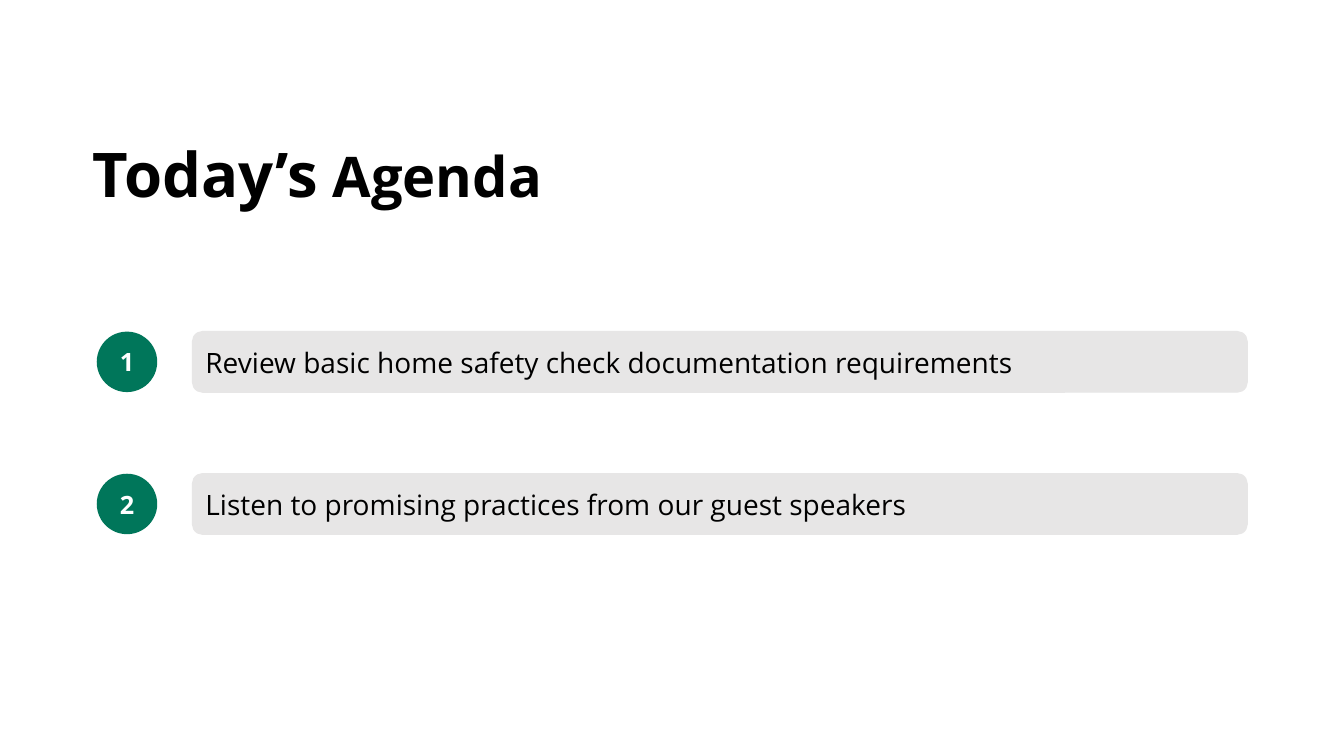
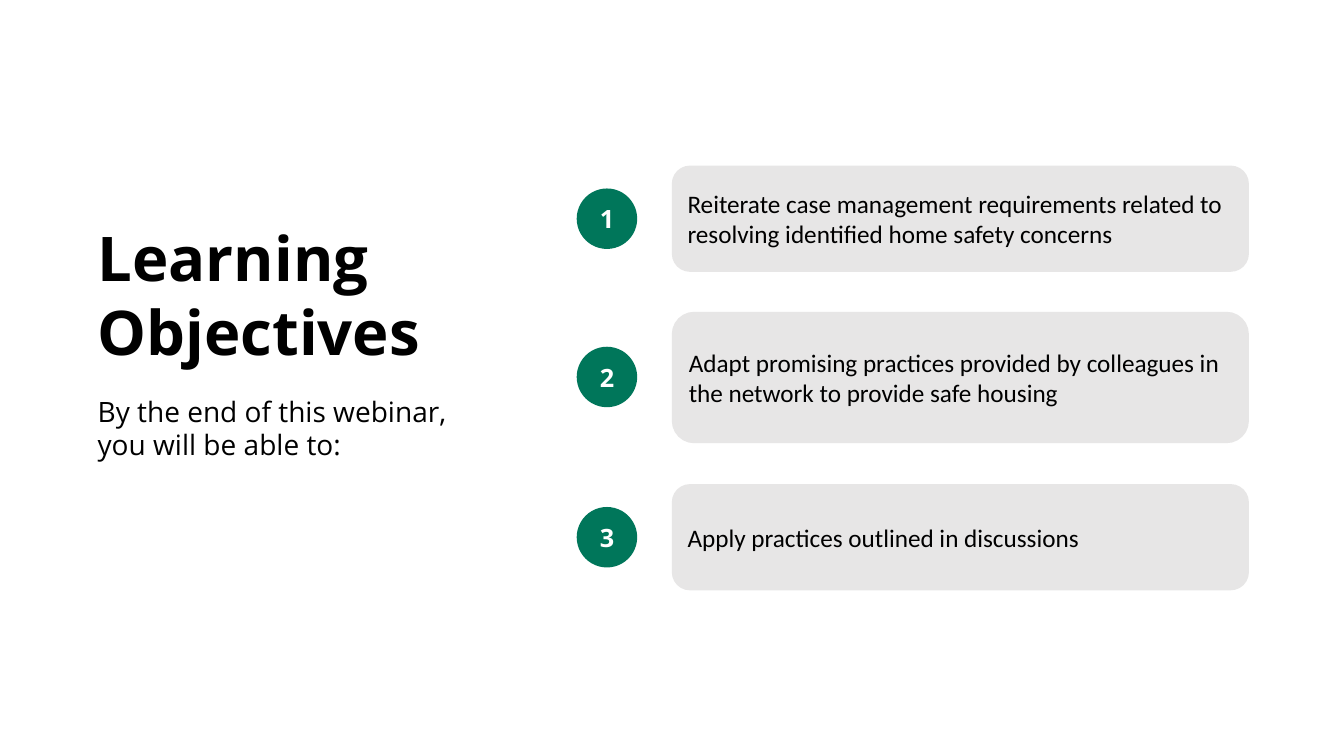
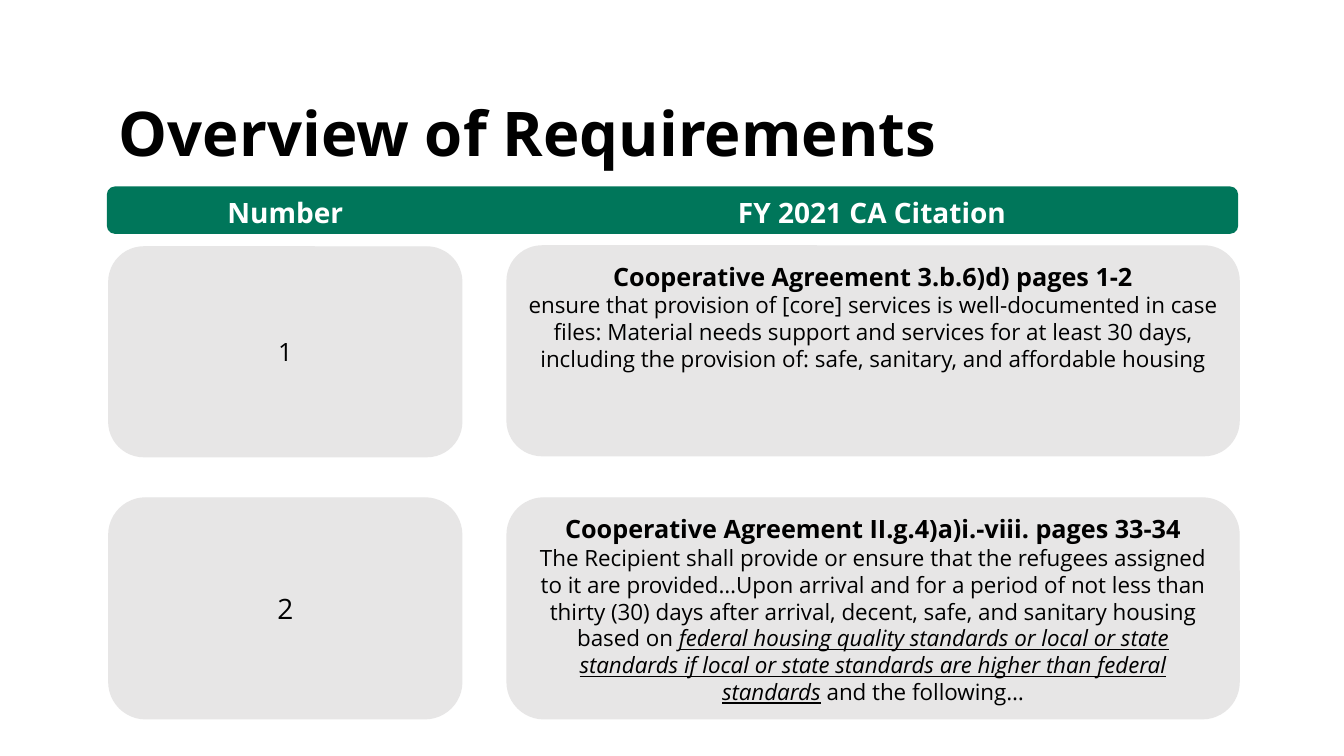
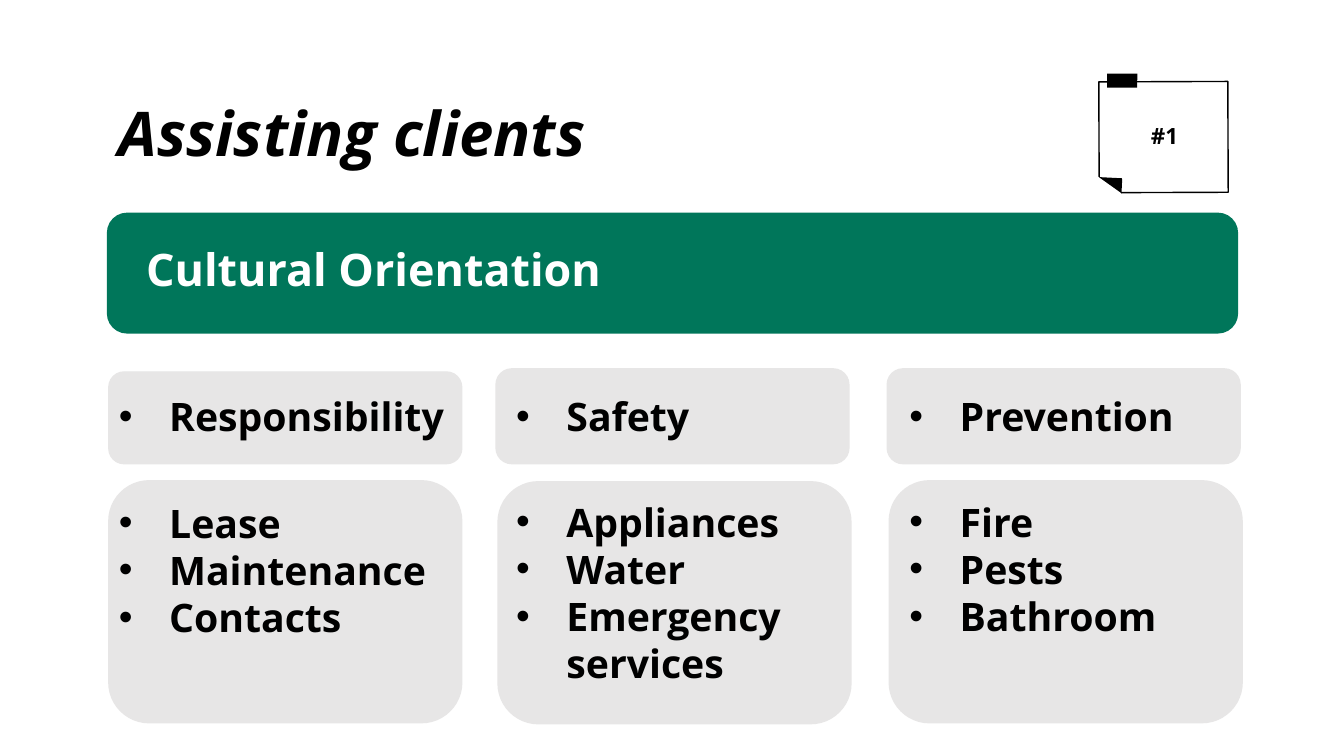
"""Build four slides of a webinar on home safety checks."""
from dataclasses import dataclass
from lxml.etree import SubElement
from pptx import Presentation
from pptx.dml.color import RGBColor
from pptx.enum.shapes import MSO_SHAPE
from pptx.enum.text import MSO_ANCHOR, MSO_AUTO_SIZE, PP_ALIGN
from pptx.oxml.ns import qn
from pptx.util import Pt

PX = 9144


@dataclass(frozen=True)
class Theme:
    green: str = "00765A"
    grey: str = "E7E6E6"
    black: str = "000000"
    white: str = "FFFFFF"
    font: str = "Open Sans"
    plain: str = "Calibri"
    title: int = 44
    second: int = 40
    band: int = 32
    list: int = 28
    text: int = 20
    label: int = 18
    small: int = 16


T = Theme()
ROUND, OVAL, RECT = MSO_SHAPE.ROUNDED_RECTANGLE, MSO_SHAPE.OVAL, MSO_SHAPE.RECTANGLE
LEFT, MID = PP_ALIGN.LEFT, PP_ALIGN.CENTER


def draw(slide, kind, box, fill=None, line=None, turn=0):
    shape = slide.shapes.add_shape(kind, *[n * PX for n in box])
    shape.shadow.inherit = False
    shape.rotation = turn
    if fill:
        shape.fill.solid()
        shape.fill.fore_color.rgb = RGBColor.from_string(fill)
    else:
        shape.fill.background()
    if line:
        shape.line.color.rgb = RGBColor.from_string(line)
        shape.line.width = Pt(1)
    else:
        shape.line.fill.background()
    return shape


def write(slide, *paras, box=None, shape=None, size=T.text, color=T.black, font=T.font,
          bold=False, slant=False, align=LEFT, anchor=MSO_ANCHOR.TOP, dots=False):
    frame = (shape or slide.shapes.add_textbox(*[n * PX for n in box])).text_frame
    frame.word_wrap = True
    frame.vertical_anchor = anchor
    if not shape:
        frame.auto_size = MSO_AUTO_SIZE.SHAPE_TO_FIT_TEXT
    for i, runs in enumerate(paras):
        para = frame.add_paragraph() if i else frame.paragraphs[0]
        para.alignment = align
        if dots:
            props = para._p.get_or_add_pPr()
            props.set("marL", str(50 * PX))
            props.set("indent", str(-50 * PX))
            SubElement(props, qn("a:buFont"), typeface="Arial")
            SubElement(props, qn("a:buChar"), char="•")
        for words, style in [(runs, {})] if isinstance(runs, str) else runs:
            run = para.add_run()
            run.text = words
            look = run.font
            look.name = font
            look.size = Pt(style.get("size", size))
            look.bold = style.get("bold", bold)
            look.italic = style.get("slant", slant)
            look.underline = style.get("under", False)
            look.color.rgb = RGBColor.from_string(color)


deck = Presentation()
deck.slide_width, deck.slide_height = 1333 * PX, 750 * PX
goals, aims, rules, help_ = [deck.slides.add_slide(deck.slide_layouts[6]) for _ in range(4)]

head = dict(size=T.title, bold=True)
write(goals, [("Today’s", {}), (" Agenda", {"size": T.second})], box=(82, 130, 728, 84), **head)
write(aims, "Learning", "Objectives", box=(87, 213, 387, 158), **head)
write(aims, "By the end of this webinar, you will be able to:", box=(87, 386, 417, 77))

steps = [
    (goals, 96, 1046, T.text, T.font, [
        (329, 60, "Review basic home safety check documentation requirements"),
        (470, 60, "Listen to promising practices from our guest speakers")]),
    (aims, 572, 571, T.label, T.plain, [
        (165, 104, "Reiterate case management requirements related to resolving "
                   "identified home safety concerns"),
        (310, 129, "Adapt promising practices provided by colleagues in the network "
                   "to provide safe housing"),
        (481, 104, "Apply practices outlined in discussions")]),
]
for slide, left, wide, size, font, rows in steps:
    for num, (top, high, words) in enumerate(rows, 1):
        dot = draw(slide, OVAL, (left, top + (high - 60) // 2, 60, 60), T.green)
        write(slide, str(num), shape=dot, size=T.label, color=T.white, bold=True,
              align=MID, anchor=MSO_ANCHOR.MIDDLE)
        bar = draw(slide, ROUND, (left + 95, top, wide, high), T.grey, T.grey)
        write(slide, words, shape=bar, size=size, font=font, anchor=MSO_ANCHOR.MIDDLE)

draw(rules, ROUND, (106, 185, 1122, 47), T.green)
strong = {"size": T.label, "bold": True}
cites = [
    (245, 244, 208, T.label,
     [("Cooperative Agreement 3.b.6)d) pages 1-2", strong)],
     "ensure that provision of [core] services is well-documented in case files: Material "
     "needs support and services for at least 30 days, including the provision of: safe, "
     "sanitary, and affordable housing"),
    (494, 494, 219, T.text,
     [("Cooperative Agreement II.g.4)a)i.-viii. pages 33-34", strong)],
     [("The Recipient shall provide or ensure that the refugees assigned to it are "
       "provided…Upon arrival and for a period of not less than thirty (30) days after "
       "arrival, decent, safe, and sanitary housing based on ", {}),
      ("federal housing quality standards or local or state standards if local or state "
       "standards are higher than federal standards", {"slant": True, "under": True}),
      (" and the following…", {})]),
]
for num, (top, side, high, size, name, quote) in enumerate(cites, 1):
    cell = draw(rules, ROUND, (108, top, 350, high), T.grey, T.grey)
    write(rules, str(num), shape=cell, size=size, align=MID, anchor=MSO_ANCHOR.MIDDLE)
    cell = draw(rules, ROUND, (503, side, 726, high), T.grey, T.grey)
    write(rules, name, quote, shape=cell, size=T.small, align=MID)
for left, wide, words in [(108, 350, "Number"), (503, 724, "FY 2021 CA Citation")]:
    write(rules, words, box=(left, 189, wide, 44), color=T.white, bold=True, align=MID)
write(rules, "Overview of Requirements", box=(108, 89, 1058, 84), **head)

write(help_, "Assisting clients", box=(108, 89, 1058, 84), slant=True, **head)
draw(help_, ROUND, (106, 211, 1122, 120), T.green)
write(help_, "Cultural Orientation", box=(135, 235, 1092, 64), size=T.band,
      color=T.white, bold=True)
points = dict(size=T.list, bold=True, dots=True)
topics = [
    ((108, 369, 350, 91), (108, 477, 350, 240), 108, 490,
     "Responsibility", ["Lease", "Maintenance", "Contacts"]),
    ((492, 366, 350, 94), (494, 478, 350, 240), 502, 489,
     "Safety", ["Appliances", "Water", "Emergency services"]),
    ((880, 366, 350, 94), (882, 477, 350, 240), 892, 489,
     "Prevention", ["Fire", "Pests", "Bathroom"]),
]
for top, base, left, row, name, items in topics:
    draw(help_, ROUND, top, T.grey, T.grey)
    draw(help_, ROUND, base, T.grey, T.grey)
    write(help_, name, box=(left, 384, 350, 57), **points)
    write(help_, *items, box=(left, row, 350, 200), **points)

note = [
    (RECT, (1090, 81, 128, 110), None, T.black, 359.8),
    (MSO_SHAPE.RIGHT_TRIANGLE, (1090, 177, 22, 14), T.black, T.black, 182.9),
    (RECT, (1080, 182, 30, 14), T.white, T.white, 35.5),
    (RECT, (1098, 73, 30, 14), T.black, None, 0.1),
]
for part in note:
    draw(help_, *part)
write(help_, "#1", box=(1090, 116, 130, 37), size=T.small, bold=True, align=MID)

deck.save("out.pptx")
